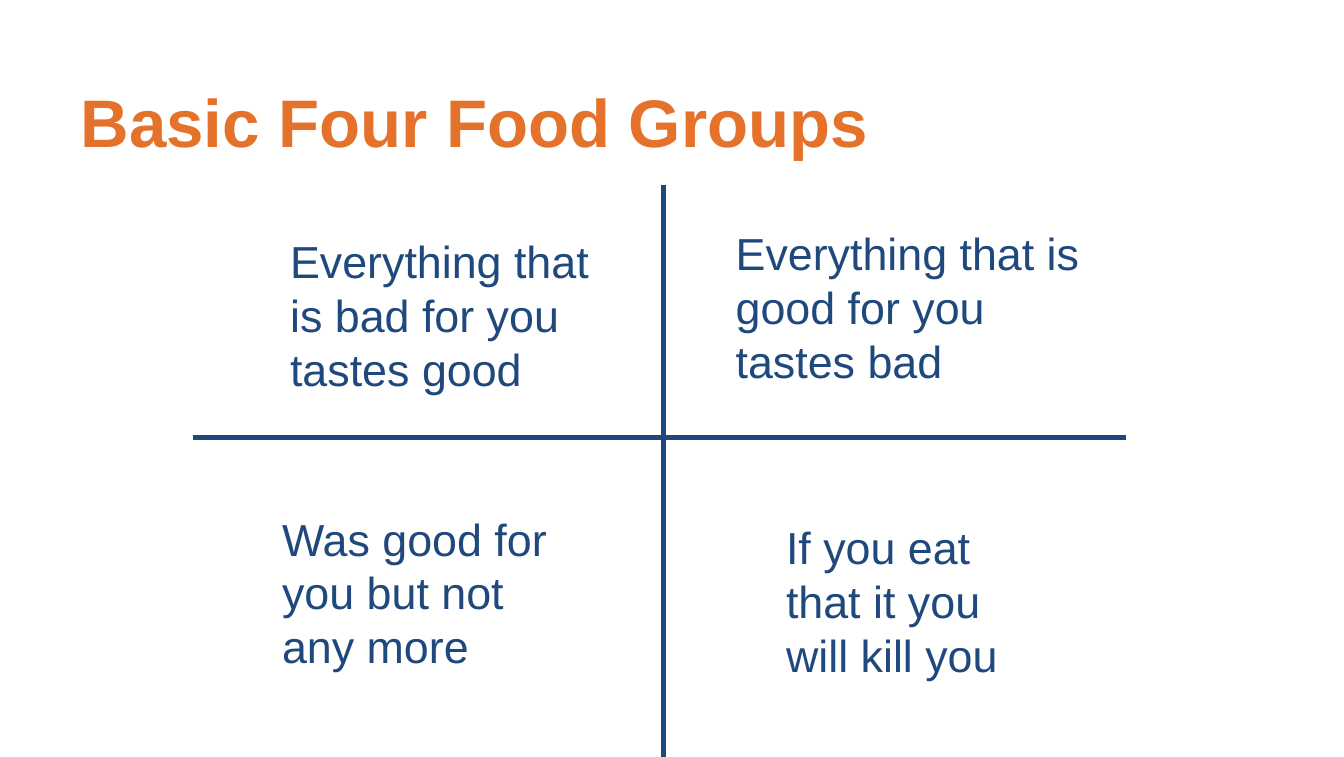
from lxml import etree
from pptx import Presentation
from pptx.dml.color import RGBColor
from pptx.enum import shapes, text
from pptx.oxml.ns import qn
from pptx.util import Pt

COLORS = {"title": "E5722A", "ink": "1F497D"}
SLIDE_W, SLIDE_H = 720, 405.36

prs = Presentation()
prs.slide_width, prs.slide_height = Pt(SLIDE_W), Pt(SLIDE_H)
s = prs.slides.add_slide(prs.slide_layouts[5])


def write(sp, words, size=24, color="ink", bold=False, spacing=None,
          anchor=text.MSO_ANCHOR.TOP):
    tf = sp.text_frame
    tf.word_wrap = True
    tf.vertical_anchor = anchor
    p = tf.paragraphs[0]
    p.alignment = text.PP_ALIGN.LEFT
    p.line_spacing = spacing
    r = p.add_run()
    r.text = words
    r.font.name = "Arial"
    r.font.size = Pt(size)
    r.font.bold = bold
    r.font.color.rgb = RGBColor.from_string(COLORS[color])


title = s.shapes.title
title.left, title.top, title.width, title.height = Pt(36), Pt(45.4), Pt(648), Pt(38.2)
write(title, "Basic Four Food Groups", size=36, color="title", bold=True,
      anchor=text.MSO_ANCHOR.MIDDLE)
title.text_frame.auto_size = text.MSO_AUTO_SIZE.NONE

# Axes of the quadrant: vertical, then horizontal
for x1, y1, x2, y2 in [(355.5, 99.2, 355.5, SLIDE_H), (103.2, 234.2, 603.2, 234.2)]:
    axis = s.shapes.add_connector(shapes.MSO_CONNECTOR.STRAIGHT,
                                  Pt(x1), Pt(y1), Pt(x2), Pt(y2))
    axis.line.color.rgb = RGBColor.from_string(COLORS["ink"])
    axis.line.width = Pt(3)
    etree.SubElement(axis._element.spPr, qn("a:effectLst"))

groups = [
    (148.3, 121.7, 193.7, "Everything that is bad for you tastes good"),
    (387, 117.3, 207.3, "Everything that is good for you tastes bad"),
    (144, 270.2, 157.7, "Was good for you but not any more"),
    (414, 275, 135.3, "If you eat that it you will kill you"),
]
for left, top, width, words in groups:
    sp = s.shapes.add_textbox(Pt(left), Pt(top), Pt(width), Pt(94.3))
    write(sp, words, spacing=Pt(28.8))
    sp.text_frame.auto_size = text.MSO_AUTO_SIZE.SHAPE_TO_FIT_TEXT

prs.save("out.pptx")
